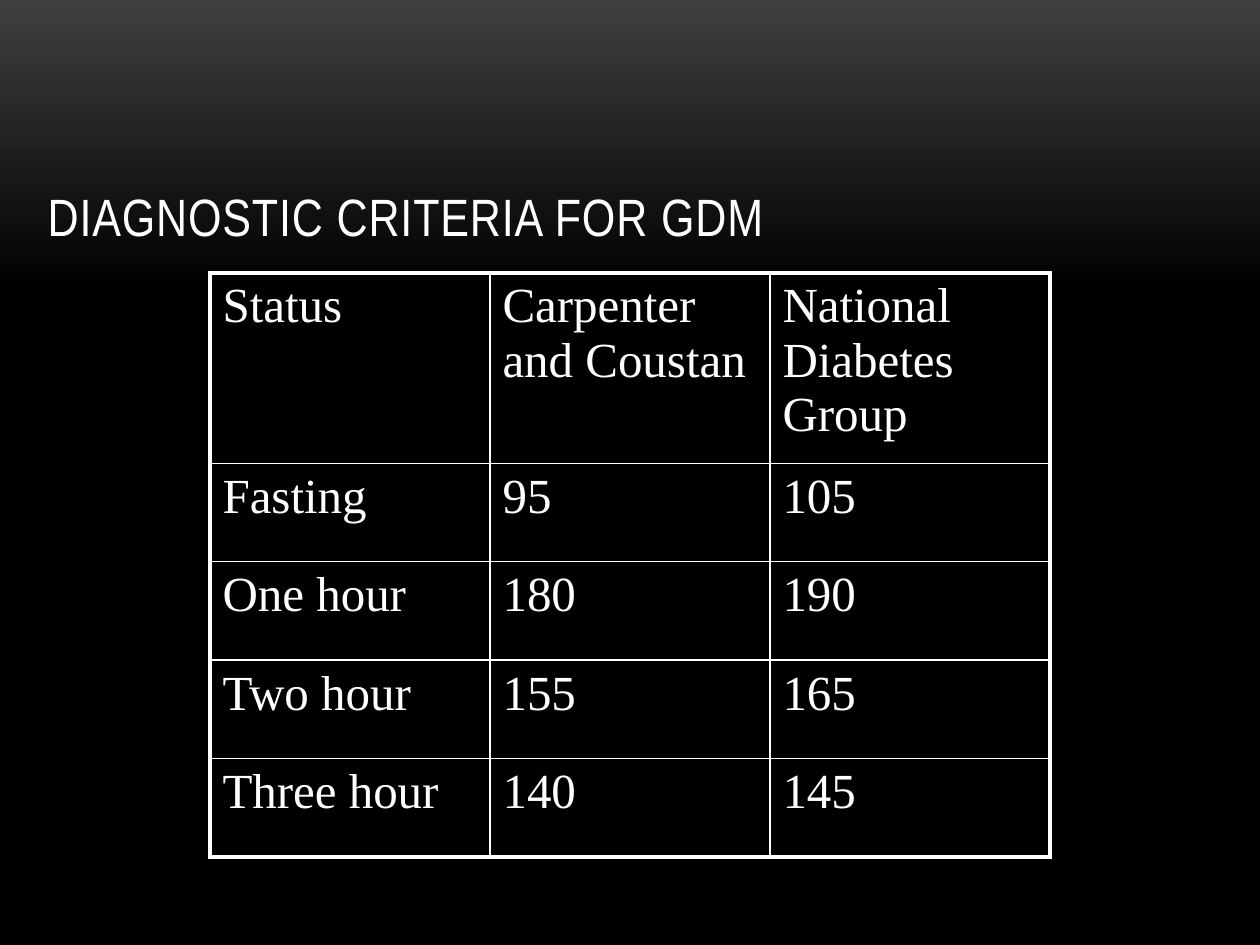
from lxml.etree import SubElement
from pptx import Presentation
from pptx.dml.color import RGBColor
from pptx.enum.text import MSO_ANCHOR, MSO_AUTO_SIZE, PP_ALIGN
from pptx.oxml.ns import qn
from pptx.util import Pt

WHITE = RGBColor(0xFF, 0xFF, 0xFF)
BLACK = RGBColor(0x00, 0x00, 0x00)
CHARCOAL = RGBColor(0x3F, 0x3F, 0x3F)

OUTER_LINE = 2.25
INNER_LINE = 1
COLUMN_WIDTH = 160
HEADER_HEIGHT = 108.75
ROW_HEIGHT = 56.25

CRITERIA = [
    ("Status", "Carpenter and Coustan", "National Diabetes Group"),
    ("Fasting", "95", "105"),
    ("One hour", "180", "190"),
    ("Two hour", "155", "165"),
    ("Three hour", "140", "145"),
]


def set_background(slide):
    """Fade from charcoal at the top edge to black."""
    fill = slide.background.fill
    fill.gradient()
    fill.gradient_angle = 270
    for stop, position, color in zip(fill.gradient_stops, (0, 0.31), (CHARCOAL, BLACK)):
        stop.position = position
        stop.color.rgb = color


def add_run(paragraph, text, font_name, size):
    run = paragraph.add_run()
    run.text = text
    run.font.name = font_name
    run.font.size = Pt(size)
    run.font.color.rgb = WHITE
    return run


def add_title(slide, text):
    title = slide.shapes.title
    title.left, title.top = Pt(20), Pt(54)
    title.width, title.height = Pt(700), Pt(90.75)
    frame = title.text_frame
    frame.auto_size = MSO_AUTO_SIZE.NONE
    frame.vertical_anchor = MSO_ANCHOR.BOTTOM
    paragraph = frame.paragraphs[0]
    paragraph.alignment = PP_ALIGN.LEFT
    run = add_run(paragraph, text, "Arial Narrow", 30)
    run.font._element.set("spc", "50")


def set_borders(cell, widths):
    """Draw the left, right, top and bottom borders, in that order."""
    properties = cell._tc.get_or_add_tcPr()
    for side, width in zip("LRTB", widths):
        line = SubElement(properties, qn(f"a:ln{side}"), w=str(Pt(width)))
        fill = SubElement(line, qn("a:solidFill"))
        SubElement(fill, qn("a:srgbClr"), val=str(WHITE))


def add_criteria_table(slide, rows):
    row_count, column_count = len(rows), len(rows[0])
    height = HEADER_HEIGHT + ROW_HEIGHT * (row_count - 1)
    table = slide.shapes.add_table(
        row_count, column_count, Pt(120), Pt(156),
        Pt(COLUMN_WIDTH * column_count), Pt(height),
    ).table
    table.first_row = False
    table.horz_banding = False
    for column in table.columns:
        column.width = Pt(COLUMN_WIDTH)

    for row_index, texts in enumerate(rows):
        table.rows[row_index].height = Pt(ROW_HEIGHT if row_index else HEADER_HEIGHT)
        for column_index, text in enumerate(texts):
            cell = table.cell(row_index, column_index)
            on_edge = (
                column_index == 0,
                column_index == column_count - 1,
                row_index == 0,
                row_index == row_count - 1,
            )
            # Borders come before the fill in the cell properties
            set_borders(cell, [OUTER_LINE if edge else INNER_LINE for edge in on_edge])
            cell.fill.background()
            add_run(cell.text_frame.paragraphs[0], text, "Times New Roman", 28)


def main():
    presentation = Presentation()
    presentation.slide_width, presentation.slide_height = Pt(720), Pt(540)
    title_only = presentation.slide_layouts[5]
    slide = presentation.slides.add_slide(title_only)

    set_background(slide)
    add_title(slide, "DIAGNOSTIC CRITERIA FOR GDM")
    add_criteria_table(slide, CRITERIA)
    presentation.save("out.pptx")


if __name__ == "__main__":
    main()
